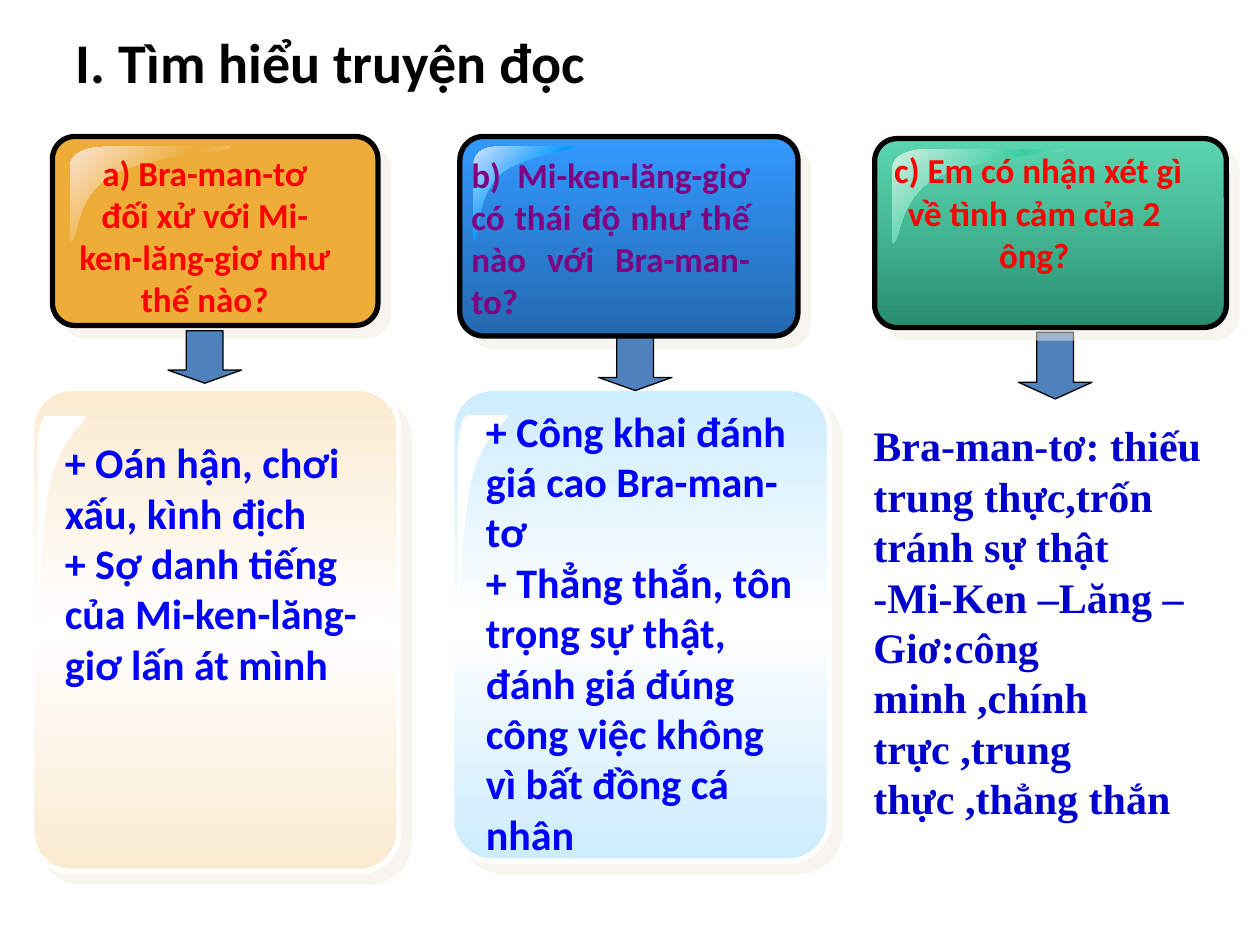
from lxml import etree
from pptx import Presentation
from pptx import util as u
from pptx.dml.color import RGBColor
from pptx.enum import shapes, text
from pptx.oxml.ns import qn

THEME = dict(
    title="000000", alert="FF0000", purple="800080", answer="0000FF", navy="0000CC",
    outline="000000", arrow="4F81BD", shadow="EEECE1", white="FFFFFF",
    amber="EEAD38", amber_gloss=["F9E5D3", "EEAD38", "F9E5D3"],
    blue=["3399FF", "2369B0"], blue_gloss=["D1E1FF", "0099FF", "D1E1FF"],
    green=["3BCFA1", "288E6F"], green_gloss=["D3EFE3", "3BCFA1", "D3EFE3"],
    cream=["FBEBD1", "FFFFFF", "FBEBD1"], sky=["CCECFF", "FFFFFF", "CCECFF"],
    h1=32, question=20, body=24, sans="Calibri", serif="Times New Roman",
)
T = THEME
ALIGN = text.PP_ALIGN


def write(sp, lines, size, color, font=T["sans"], align=ALIGN.LEFT):
    tf = sp.text_frame
    tf.word_wrap = True
    tf.auto_size = text.MSO_AUTO_SIZE.NONE
    tf.vertical_anchor = text.MSO_ANCHOR.TOP
    for i, line in enumerate(lines):
        p = tf.add_paragraph() if i else tf.paragraphs[0]
        p.alignment = align
        r = p.add_run()
        r.text = line
        r.font.size, r.font.name, r.font.bold = u.Pt(size), font, True
        r.font.color.rgb = RGBColor.from_string(color)


def paint(sp, fill, line=None, width=3, angle=90, alpha=100, shadow=False):
    sp.shadow.inherit = False
    spPr = sp.element.spPr
    if isinstance(fill, str):
        sp.fill.solid()
        sp.fill.fore_color.rgb = RGBColor.from_string(fill)
    else:
        sp.fill.gradient()
        sp.fill.gradient_angle = 360 - angle
        stops = spPr.find(qn("a:gradFill")).find(qn("a:gsLst"))
        for old in list(stops):
            stops.remove(old)
        for i, color in enumerate(fill):
            gs = etree.SubElement(stops, qn("a:gs"), pos=str(100000 * i // (len(fill) - 1)))
            clr = etree.SubElement(gs, qn("a:srgbClr"), val=color)
            if i == 0 and alpha < 100:
                etree.SubElement(clr, qn("a:alpha"), val=str(alpha * 1000))
    if line:
        sp.line.width = u.Pt(width)
        sp.line.color.rgb = RGBColor.from_string(line)
    else:
        sp.line.fill.background()
    if shadow:
        shdw = etree.SubElement(spPr.find(qn("a:effectLst")), qn("a:outerShdw"), blurRad="0",
                                dist=str(u.Pt(8.5)), dir="2700000", algn="ctr", rotWithShape="0")
        clr = etree.SubElement(shdw, qn("a:srgbClr"), val=T["shadow"])
        etree.SubElement(clr, qn("a:alpha"), val="50000")


prs = Presentation()
prs.slide_width, prs.slide_height = u.Inches(10), u.Inches(7.5)
cell = prs.slide_width // 120
s = prs.slides.add_slide(prs.slide_layouts[1])
s.shapes.title.element.getparent().remove(s.shapes.title.element)

body = s.placeholders[1]
body.left, body.top, body.width, body.height = [cell * v for v in (6, 2, 108, 78)]
write(body, ["I. Tìm hiểu truyện đọc"], T["h1"], T["title"])
pPr = body.text_frame.paragraphs[0]._p.get_or_add_pPr()
pPr.set("marL", "342900")
pPr.set("indent", "-342900")
etree.SubElement(pPr, qn("a:buNone"))

gloss = [
    (0.2, 0), (0.09, 0), (0, 0.08), (0, 0.19),
    (0, 0.99), (0.05, 1), (0.02, 0.51), (0.27, 0.28),
    (0.52, 0.07), (1, 0.04), (0.98, 0), (0.2, 0),
]
curve_starts = (0, 4, 7)

question = dict(size=T["question"], color=T["alert"], align=ALIGN.CENTER)
answer = dict(size=T["body"], color=T["answer"])
card = dict(line=T["outline"], shadow=True)
panel = dict(line=T["white"], shadow=True)

parts = [
    ("box", (5, 13, 31, 18), 0.119, T["amber"], card),
    ("gloss", (6.7, 14, 15.5, 9), T["amber_gloss"]),
    ("text", (6, 13.8, 27, 17.2), ["a) Bra-man-tơ đối xử với Mi-ken-lăng-giơ như thế nào?"], question),
    ("box", (43.8, 13, 32.2, 19), 0.119, T["blue"], card),
    ("gloss", (45.1, 14, 9.6, 9), T["blue_gloss"]),
    ("text", (43.7, 14, 28.9, 17.2), ["b) Mi-ken-lăng-giơ có thái độ như thế nào với Bra-man-to?"],
     dict(question, color=T["purple"], align=ALIGN.JUSTIFY)),
    ("box", (3, 37, 35, 46), 0.109, T["cream"], panel),
    ("gloss", (3.5, 39.6, 4.7, 22.9), T["white"]),
    ("text", (5, 41, 31.4, 34.8),
     ["+ Oán hận, chơi xấu, kình địch", "+ Sợ danh tiếng của Mi-ken-lăng-giơ lấn át mình"], answer),
    ("arrow", (16, 31.5, 7, 5)),
    ("box", (43, 37, 36, 45), 0.109, T["sky"], panel),
    ("gloss", (43.6, 39.5, 4.8, 22.4), T["white"]),
    ("text", (45.1, 38, 32.3, 44.9),
     ["+ Công khai đánh giá cao Bra-man-tơ",
      "+ Thẳng thắn, tôn trọng sự thật, đánh giá đúng công việc không vì bất đồng cá nhân"], answer),
    ("arrow", (57, 32.2, 7, 5)),
    ("arrow", (97, 31.65, 7, 6.35)),
    ("box", (83.3, 13.2, 33.5, 18), 0.119, T["green"], dict(card, alpha=82)),
    ("gloss", (85, 14.2, 16.7, 9), T["green_gloss"]),
    ("text", (82, 13.6, 33, 13.2), [" c) Em có nhận xét gì về tình cảm của 2 ông?"], question),
    ("text", (82, 39.4, 39, 35.2),
     ["Bra-man-tơ: thiếu trung thực,trốn tránh sự thật",
      "-Mi-Ken –Lăng –Giơ:công minh ,chính trực ,trung thực ,thẳng thắn"],
     dict(answer, color=T["navy"], font=T["serif"])),
]

for kind, grid, *look in parts:
    x, y, w, h = at = [int(cell * v) for v in grid]
    if kind == "box":
        radius, fill, style = look
        sp = s.shapes.add_shape(shapes.MSO_SHAPE.ROUNDED_RECTANGLE, *at)
        sp.adjustments[0] = radius
        paint(sp, fill, **style)
    elif kind == "gloss":
        points = [(x + int(w * px), y + int(h * py)) for px, py in gloss]
        fb = s.shapes.build_freeform(*points[0])
        fb.add_line_segments(points[1:], close=True)
        sp = fb.convert_to_shape()
        steps = list(sp.element.spPr.iter(qn("a:lnTo")))
        for i in curve_starts:
            curve = etree.Element(qn("a:cubicBezTo"))
            steps[i].addprevious(curve)
            for step in steps[i:i + 3]:
                curve.append(step[0])
                step.getparent().remove(step)
        paint(sp, look[0], angle=45)
    elif kind == "arrow":
        sp = s.shapes.add_shape(shapes.MSO_SHAPE.DOWN_ARROW, *at)
        sp.adjustments[0], sp.adjustments[1] = 0.5, 0.25
        paint(sp, T["arrow"], T["outline"], 0.75)
    else:
        write(s.shapes.add_textbox(*at), look[0], **look[1])

prs.save("out.pptx")
